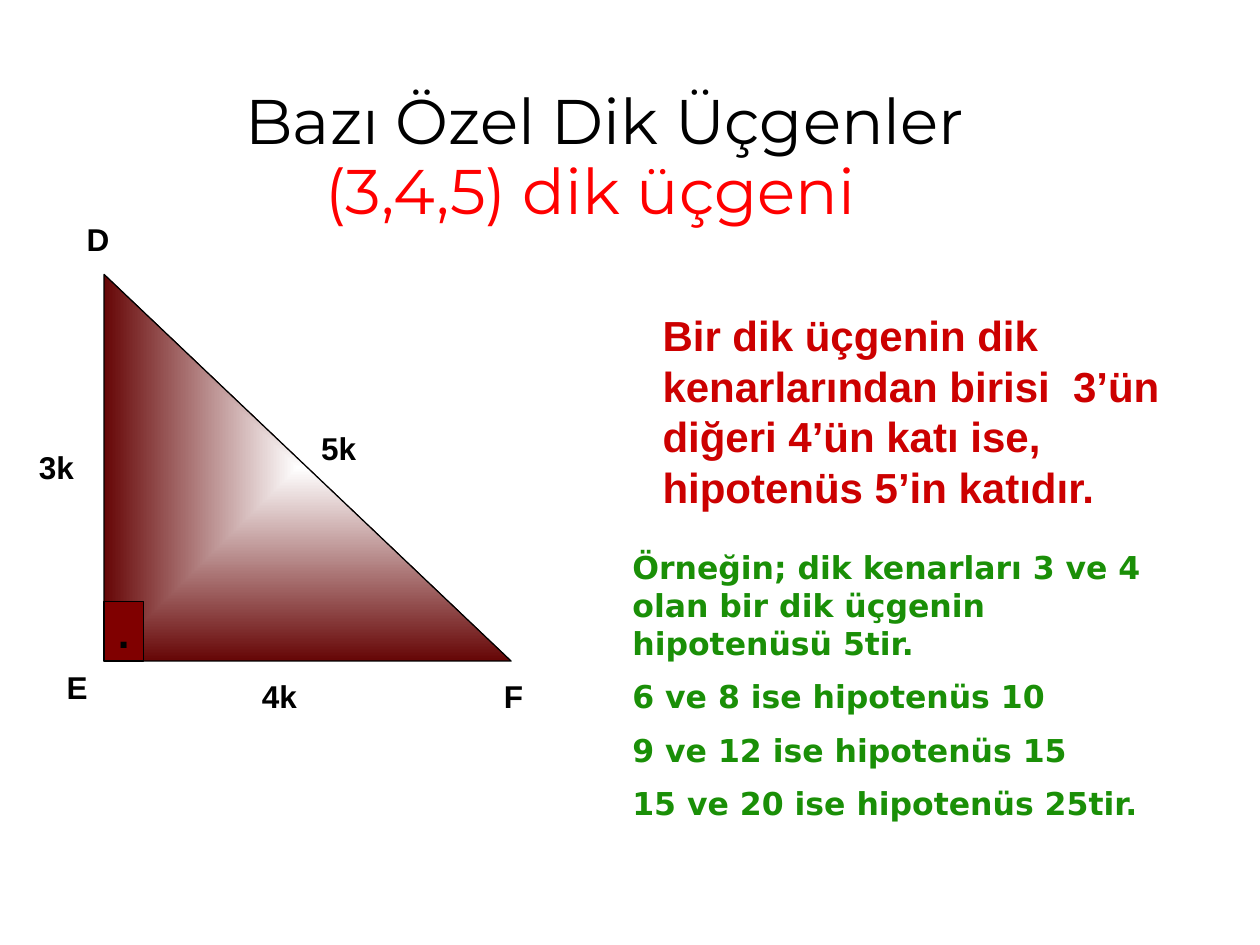
from pptx import Presentation
from pptx.dml.color import RGBColor
from pptx.enum.shapes import MSO_SHAPE
from pptx.enum.text import MSO_ANCHOR, MSO_AUTO_SIZE, PP_ALIGN
from pptx.oxml import parse_xml
from pptx.oxml.ns import nsdecls
from pptx.util import Pt


def color(value):
    return RGBColor.from_string(value)


def write(shape, lines, size, font, text_color, bold=True, centered=False):
    """Centered text stays on one line; other text wraps and sets the height."""
    frame = shape.text_frame
    frame.word_wrap = not centered
    if not centered:
        frame.auto_size = MSO_AUTO_SIZE.SHAPE_TO_FIT_TEXT
    for index, line in enumerate(lines):
        paragraph = frame.add_paragraph() if index else frame.paragraphs[0]
        paragraph.alignment = PP_ALIGN.CENTER if centered else PP_ALIGN.LEFT
        if index:
            paragraph.space_before = Pt(size / 2)
        run = paragraph.add_run()
        run.text = line
        run.font.size = Pt(size)
        run.font.name = font
        run.font.bold = bold
        run.font.color.rgb = color(text_color)


presentation = Presentation()
presentation.slide_width = Pt(720)
presentation.slide_height = Pt(540)
slide = presentation.slides.add_slide(presentation.slide_layouts[6])
shapes = slide.shapes

# Title lines
for text, left, top, width, text_color in [
    ("Bazı Özel Dik Üçgenler", 121.7, 43.2, 447.8, "000000"),
    ("(3,4,5) dik üçgeni", 167, 82.8, 340.6, "FF0000"),
]:
    title = shapes.add_textbox(Pt(left), Pt(top), Pt(width), Pt(51))
    write(title, [text], 36, "Montserrat", text_color, bold=False, centered=True)

# Right triangle with its right-angle mark
triangle_left, triangle_bottom = 59.5, 377.8
triangle_parts = []
for kind, width, height in [
    (MSO_SHAPE.RIGHT_TRIANGLE, 232.6, 221),
    (MSO_SHAPE.RECTANGLE, 22.5, 34),
]:
    part = shapes.add_shape(
        kind, Pt(triangle_left), Pt(triangle_bottom - height), Pt(width), Pt(height))
    part.shadow.inherit = False
    part.line.color.rgb = color("000000")
    part.line.width = Pt(0.75)
    triangle_parts.append(part)
triangle, angle_mark = triangle_parts

triangle.fill.background()
no_fill = triangle._element.spPr.find(
    "{http://schemas.openxmlformats.org/drawingml/2006/main}noFill")
gradient = parse_xml(
    f'<a:gradFill {nsdecls("a")} rotWithShape="1"><a:gsLst>'
    '<a:gs pos="0"><a:srgbClr val="FFFFFF"/></a:gs>'
    '<a:gs pos="100000"><a:srgbClr val="660606"/></a:gs></a:gsLst>'
    '<a:path path="shape">'
    '<a:fillToRect l="50000" t="50000" r="50000" b="50000"/></a:path></a:gradFill>')
no_fill.getparent().replace(no_fill, gradient)

angle_mark.fill.solid()
angle_mark.fill.fore_color.rgb = color("800000")
angle_mark.text_frame.vertical_anchor = MSO_ANCHOR.MIDDLE
write(angle_mark, ["."], 24, "Arial", "000000", centered=True)

# Corner and side labels
corner_width, side_width = 45.4, 54
corner_inset, side_inset = 7.2, 22.2
for text, left, top, width, inset in [
    ("D", 42.5, 122.4, corner_width, corner_inset),
    ("E", 31, 378, corner_width, corner_inset),
    ("F", 280.8, 383.4, corner_width, corner_inset),
    ("3k", 0, 252.7, side_width, side_inset),
    ("5k", 161.3, 241.6, side_width, side_inset),
    ("4k", 127.4, 383.4, side_width, side_inset),
]:
    label = shapes.add_textbox(Pt(left), Pt(top), Pt(width), Pt(28.8))
    label.text_frame.margin_left = Pt(inset)
    write(label, [text], 18, "Arial", "000000")

# Rule and examples
rule = shapes.add_textbox(Pt(371.5), Pt(173.5), Pt(317.5), Pt(122.4))
write(rule, [
    "Bir dik üçgenin dik kenarlarından birisi  3’ün diğeri 4’ün katı ise, "
    "hipotenüs 5’in katıdır.",
], 24, "Arial", "CC0000")

examples = shapes.add_textbox(Pt(354.3), Pt(309.6), Pt(329), Pt(170))
write(examples, [
    "Örneğin; dik kenarları 3 ve 4 olan bir dik üçgenin hipotenüsü 5tir.",
    "6 ve 8 ise hipotenüs 10",
    "9 ve 12 ise hipotenüs 15",
    "15 ve 20 ise hipotenüs 25tir.",
], 18, "DejaVu Sans", "1A8F07")

presentation.save("out.pptx")
